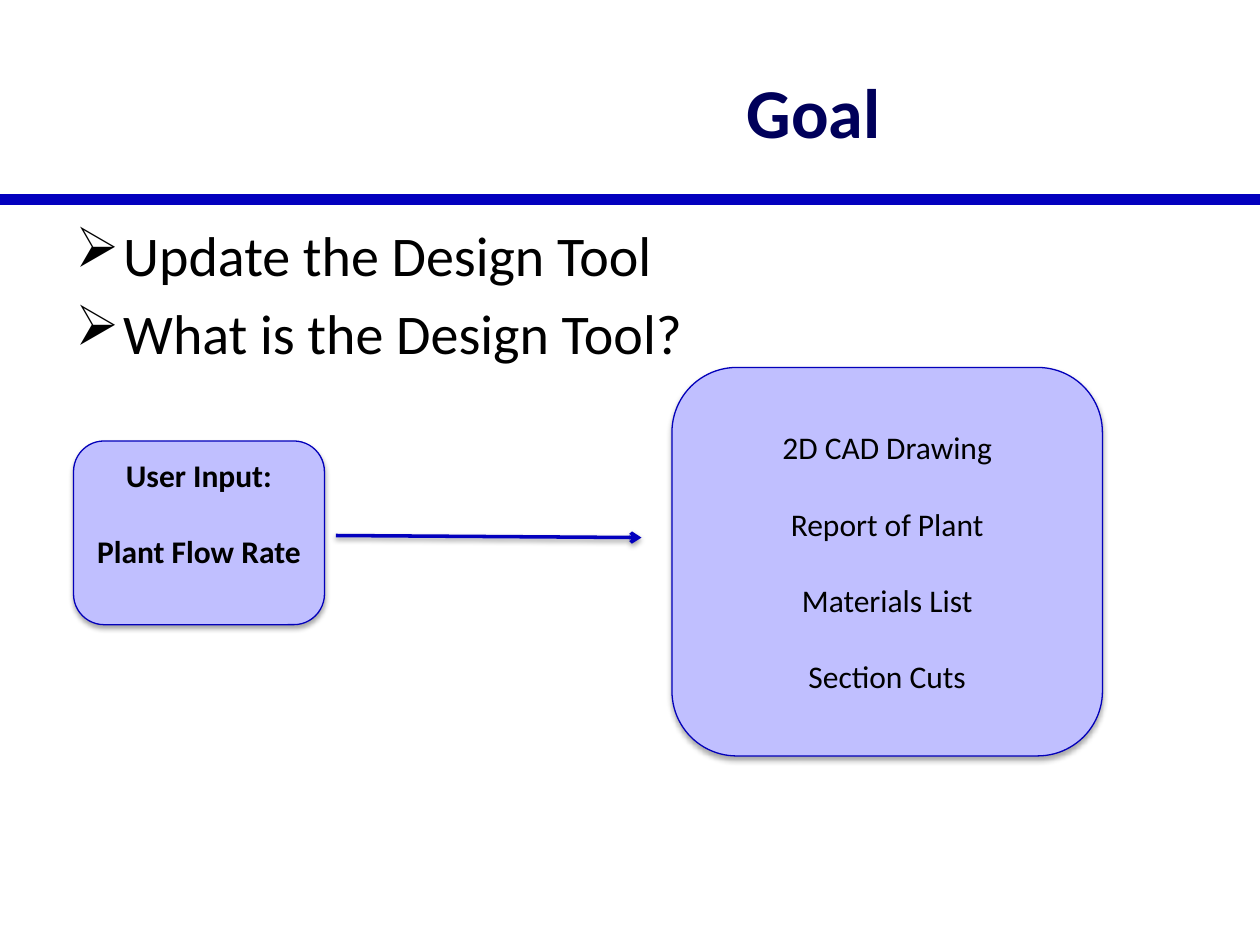
import pptx
import pptx.util
import pptx.dml.color
import pptx.enum.shapes
import pptx.enum.text
import pptx.oxml
import pptx.oxml.ns
import lxml.etree

COLORS = {
    "title": "00005A", "text": "000000", "rule": "0300BE",
    "box": "C0BFFF", "outline": "0300BA", "shadow": "000000",
}
RGB = pptx.dml.color.RGBColor.from_string
Pt = pptx.util.Pt
ALIGN = pptx.enum.text.PP_ALIGN
ANCHOR = pptx.enum.text.MSO_ANCHOR
LINE = pptx.enum.shapes.MSO_CONNECTOR.STRAIGHT

deck = pptx.Presentation()
deck.slide_width = pptx.util.Inches(10)
deck.slide_height = pptx.util.Inches(7.5)
COL = deck.slide_width // 120
ROW = deck.slide_height // 90
slide = deck.slides.add_slide(deck.slide_layouts[5])


def write(frame, lines, size, color="text", bold=False, align=ALIGN.CENTER,
          anchor=ANCHOR.MIDDLE, gap=0, bullet=None):
    """Fill a text frame, with gap points between lines and an optional bullet."""
    frame.word_wrap = True
    frame.vertical_anchor = anchor
    for i, line in enumerate(lines):
        paragraph = frame.paragraphs[0] if i == 0 else frame.add_paragraph()
        if bullet:
            props = paragraph._p.get_or_add_pPr()
            indent = pptx.util.Inches(0.38)
            props.set("marL", str(indent))
            props.set("indent", str(-indent))
            mark = lxml.etree.SubElement(props, pptx.oxml.ns.qn("a:buChar"))
            mark.set("char", bullet)
        paragraph.alignment = align
        if i:
            paragraph.space_before = Pt(gap)
        run = paragraph.add_run()
        run.text = line
        run.font.name = "Calibri"
        run.font.size = Pt(size)
        run.font.bold = bold
        run.font.color.rgb = RGB(COLORS[color])


def set_shadow(shape, distance=0, opacity=0):
    """Replace the theme shadow by a downward one, or by none at opacity 0."""
    shadow = (
        f'<a:outerShdw blurRad="{Pt(3.1)}" dist="{Pt(distance)}" dir="5400000" rotWithShape="0">'
        f'<a:srgbClr val="{COLORS["shadow"]}"><a:alpha val="{opacity * 1000}"/></a:srgbClr>'
        '</a:outerShdw>' if opacity else "")
    shape._element.spPr.append(pptx.oxml.parse_xml(
        f'<a:effectLst {pptx.oxml.ns.nsdecls("a")}>{shadow}</a:effectLst>'))


rule = slide.shapes.add_connector(LINE, 0, 19 * ROW, 120 * COL, 19 * ROW)
rule.line.color.rgb = RGB(COLORS["rule"])
rule.line.width = Pt(6)
set_shadow(rule)

goal = slide.shapes.title
goal.left, goal.top, goal.width, goal.height = 38 * COL, 3 * ROW, 79 * COL, 15 * ROW
write(goal.text_frame, ["Goal"], 40, color="title", bold=True)

points = slide.shapes.add_textbox(6 * COL, int(20.4 * ROW), 107 * COL, 62 * ROW)
write(points.text_frame, ["Update the Design Tool", "What is the Design Tool?"], 32,
      align=ALIGN.LEFT, anchor=ANCHOR.TOP, gap=6, bullet="➢")

steps = [
    (7, 42, 23.9, 17.5, ["User Input:", "Plant Flow Rate"], True, ANCHOR.TOP),
    (64, 35, 41, 37, ["2D CAD Drawing", "Report of Plant", "Materials List", "Section Cuts"],
     False, ANCHOR.MIDDLE),
]
for left, top, width, height, lines, bold, anchor in steps:
    step = slide.shapes.add_shape(
        pptx.enum.shapes.MSO_SHAPE.ROUNDED_RECTANGLE,
        left * COL, top * ROW, int(width * COL), int(height * ROW))
    step.fill.solid()
    step.fill.fore_color.rgb = RGB(COLORS["box"])
    step.line.color.rgb = RGB(COLORS["outline"])
    step.line.width = Pt(0.75)
    set_shadow(step, distance=1.8, opacity=35)
    write(step.text_frame, lines, 18, bold=bold, anchor=anchor, gap=22)

flow = slide.shapes.add_connector(LINE, 32 * COL, 51 * ROW, int(61.1 * COL), int(51.2 * ROW))
flow.line.color.rgb = RGB(COLORS["rule"])
flow.line.width = Pt(2)
head = lxml.etree.SubElement(flow.line._get_or_add_ln(), pptx.oxml.ns.qn("a:tailEnd"))
head.set("type", "arrow")
set_shadow(flow, distance=1.6, opacity=38)

deck.save("out.pptx")
